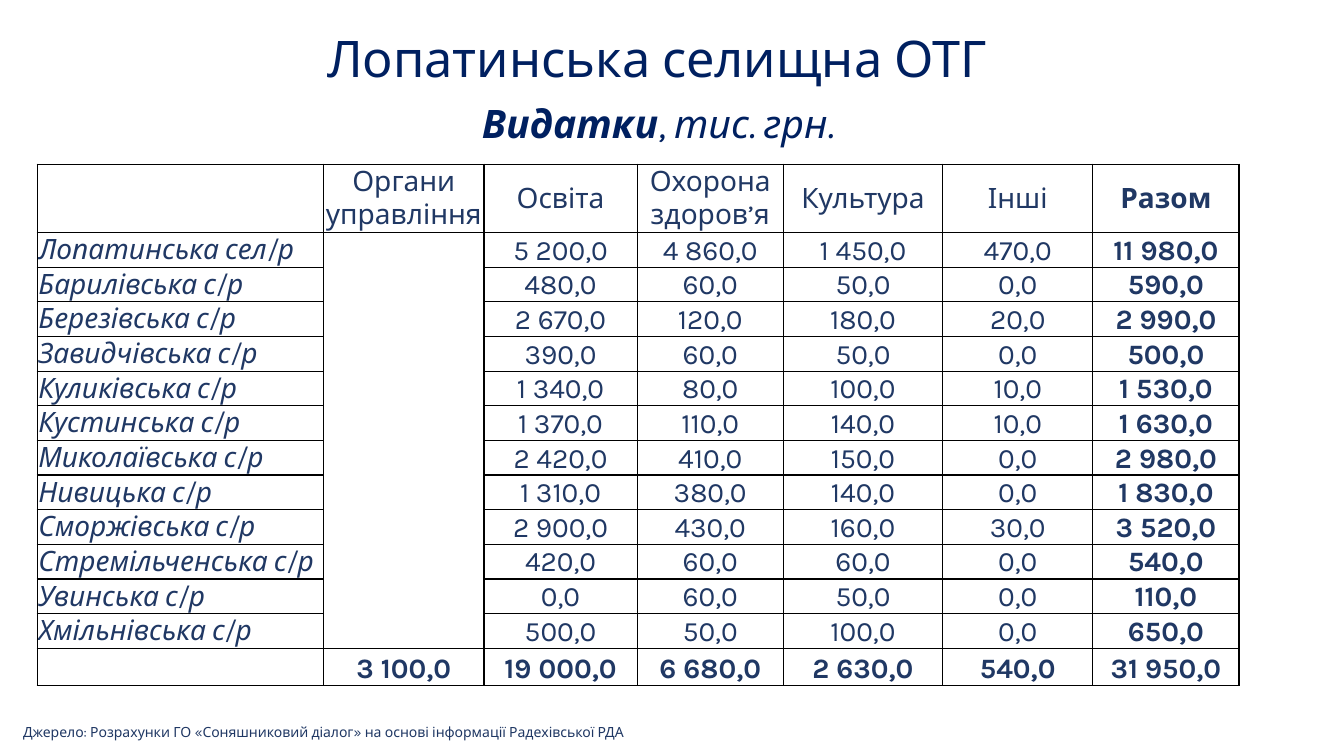
import pptx
import pptx.dml.color
import pptx.enum.text
import pptx.oxml
import pptx.oxml.ns
import pptx.util

PX = 9144  # 100 px to the inch
THEME = {
    "font": "Karla", "navy": "002060", "blue": "203864", "border": "000000",
    "title": 36, "subtitle": 28, "table": 20, "source": 10,
}
ALIGN = pptx.enum.text.PP_ALIGN
ANCHOR = pptx.enum.text.MSO_ANCHOR


def style(r, size, color, bold=False, italic=False):
    f = r.font
    f.name, f.size = THEME["font"], pptx.util.Pt(THEME[size])
    f.bold, f.italic = bold, italic
    f.color.rgb = pptx.dml.color.RGBColor.from_string(THEME[color])


def add_text(s, box, text, size, color):
    sp = s.shapes.add_textbox(*(v * PX for v in box))
    tf = sp.text_frame
    tf.word_wrap = True
    tf.text = text
    style(tf.paragraphs[0].runs[0], size, color)
    return tf


prs = pptx.Presentation()
prs.slide_width, prs.slide_height = 1333 * PX, 750 * PX
s = prs.slides.add_slide(prs.slide_layouts[6])

# Subtitle and title
subtitle = add_text(s, (128, 99, 1049, 45), "Видатки", "subtitle", "navy")
p = subtitle.paragraphs[0]
r = p.add_run()
r.text = ", тис. грн."
for r in p.runs:
    style(r, "subtitle", "navy", bold=r.text == "Видатки", italic=True)
title = add_text(s, (37, 12, 1229, 98), "Лопатинська селищна ОТГ", "title", "navy")
title.vertical_anchor = ANCHOR.MIDDLE
for tf in (subtitle, title):
    tf.paragraphs[0].alignment = ALIGN.CENTER
    tf.paragraphs[0].line_spacing = 0.9

# Expenditure table
rows = [
    ["", "Органи управління", "Освіта", "Охорона здоров’я", "Культура", "Інші", "Разом"],
    ["Лопатинська сел/р", "", "5 200,0", "4 860,0", "1 450,0", "470,0", "11 980,0"],
    ["Барилівська с/р", "", "480,0", "60,0", "50,0", "0,0", "590,0"],
    ["Березівська с/р", "", "2 670,0", "120,0", "180,0", "20,0", "2 990,0"],
    ["Завидчівська с/р", "", "390,0", "60,0", "50,0", "0,0", "500,0"],
    ["Куликівська с/р", "", "1 340,0", "80,0", "100,0", "10,0", "1 530,0"],
    ["Кустинська с/р", "", "1 370,0", "110,0", "140,0", "10,0", "1 630,0"],
    ["Миколаївська с/р", "", "2 420,0", "410,0", "150,0", "0,0", "2 980,0"],
    ["Нивицька с/р", "", "1 310,0", "380,0", "140,0", "0,0", "1 830,0"],
    ["Сморжівська с/р", "", "2 900,0", "430,0", "160,0", "30,0", "3 520,0"],
    ["Стремільченська с/р", "", "420,0", "60,0", "60,0", "0,0", "540,0"],
    ["Увинська с/р", "", "0,0", "60,0", "50,0", "0,0", "110,0"],
    ["Хмільнівська с/р", "", "500,0", "50,0", "100,0", "0,0", "650,0"],
    ["", "3 100,0", "19 000,0", "6 680,0", "2 630,0", "540,0", "31 950,0"],
]
widths = [284, 159, 152, 145, 158, 149, 145]
last_row, last_col = len(rows) - 1, len(widths) - 1
heights = [66] + [33] * (last_row - 1) + [37]
table = s.shapes.add_table(len(rows), len(widths), 37 * PX, 163 * PX,
                           sum(widths) * PX, sum(heights) * PX).table
table.first_row = table.horz_banding = False
for column, width in zip(table.columns, widths):
    column.width = width * PX
for row, height in zip(table.rows, heights):
    row.height = height * PX
table.cell(1, 1).merge(table.cell(last_row - 1, 1))

for i, row in enumerate(rows):
    for j, text in enumerate(row):
        cell = table.cell(i, j)
        cell.margin_left = cell.margin_right = cell.margin_top = PX
        cell.margin_bottom = 0
        is_label = j == 0
        cell.vertical_anchor = ANCHOR.MIDDLE if i == 0 or is_label else ANCHOR.BOTTOM

        # Borders, without inner lines in the merged cell
        for side in "LR" if cell.is_spanned else "LRTB":
            cell._tc.get_or_add_tcPr().append(pptx.oxml.parse_xml(
                f'<a:ln{side} {pptx.oxml.ns.nsdecls("a")} w="12700"><a:solidFill>'
                f'<a:srgbClr val="{THEME["border"]}"/></a:solidFill></a:ln{side}>'))
        cell.fill.background()

        if text:
            cell.text_frame.text = text
            p = cell.text_frame.paragraphs[0]
            p.alignment = ALIGN.LEFT if is_label else ALIGN.CENTER
            style(p.runs[0], "table", "blue",
                  bold=i == last_row or j == last_col, italic=is_label)

# Source line
source = add_text(
    s, (13, 713, 618, 27),
    "Джерело: Розрахунки ГО «Соняшниковий діалог» на основі інформації Радехівської РДА",
    "source", "blue")
source.auto_size = pptx.enum.text.MSO_AUTO_SIZE.SHAPE_TO_FIT_TEXT

prs.save("out.pptx")
